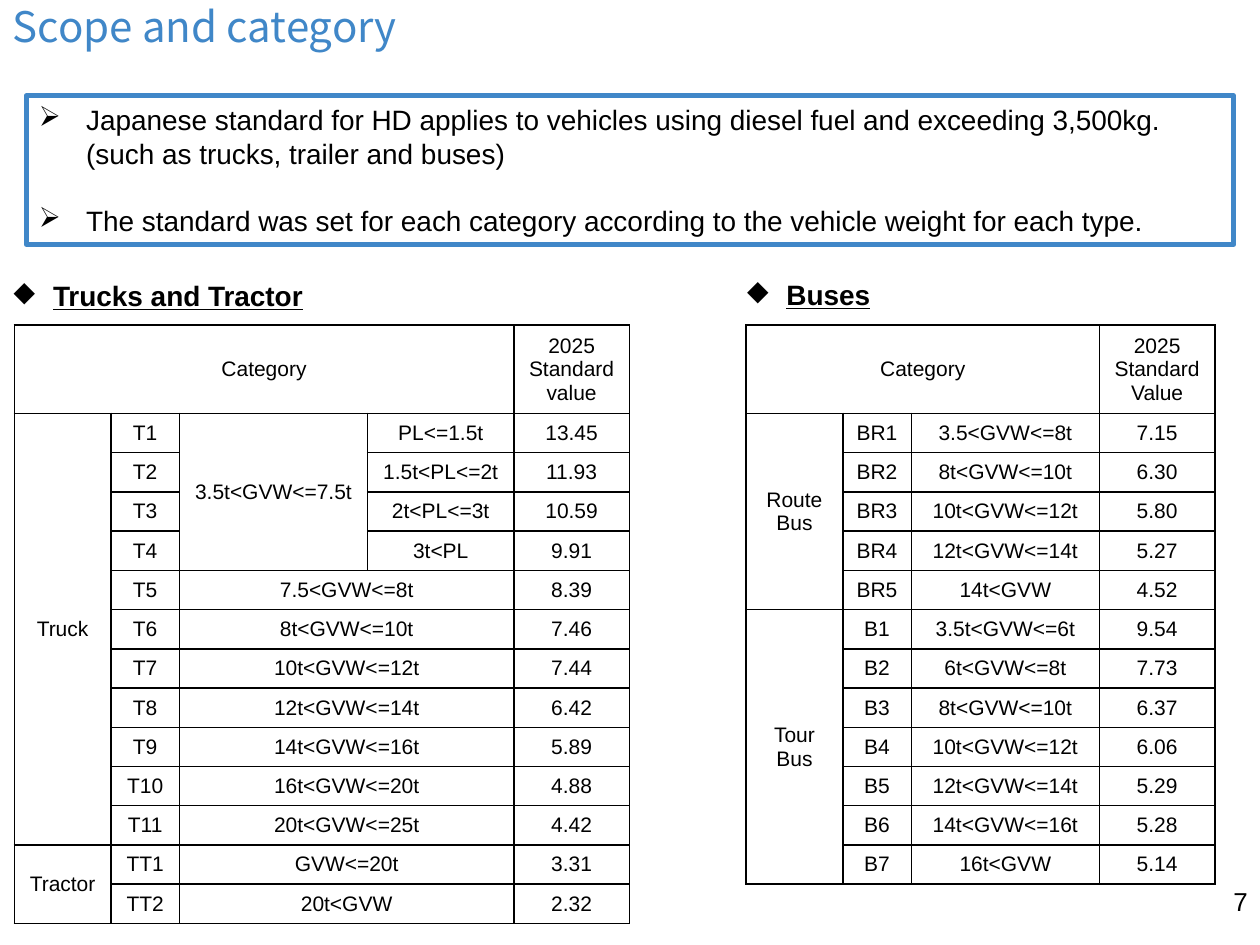
from pptx import Presentation
from pptx.dml.color import RGBColor as RGB
from pptx.enum.shapes import MSO_SHAPE as Shape
from pptx.enum.text import MSO_ANCHOR as Anchor, MSO_AUTO_SIZE as Fit, PP_ALIGN as Align
from pptx.oxml import parse_xml
from pptx.oxml.ns import nsdecls
from pptx.oxml.xmlchemy import OxmlElement as Elem
from pptx.util import Pt

BLACK = RGB(0, 0, 0)
WHITE = RGB(255, 255, 255)
BLUE = RGB(0x40, 0x87, 0xC8)

TOP, HEAD, ROW = 185.8, 50.4, 22.44
SIDE, CODE, RANGE, LOAD, VALUE = 55.2, 39.2, 107.5, 83.6, 66

TRUCKS = [
    ("T1", "PL<=1.5t", "13.45"),
    ("T2", "1.5t<PL<=2t", "11.93"),
    ("T3", "2t<PL<=3t", "10.59"),
    ("T4", "3t<PL", "9.91"),
    ("T5", "7.5<GVW<=8t", "8.39"),
    ("T6", "8t<GVW<=10t", "7.46"),
    ("T7", "10t<GVW<=12t", "7.44"),
    ("T8", "12t<GVW<=14t", "6.42"),
    ("T9", "14t<GVW<=16t", "5.89"),
    ("T10", "16t<GVW<=20t", "4.88"),
    ("T11", "20t<GVW<=25t", "4.42"),
    ("TT1", "GVW<=20t", "3.31"),
    ("TT2", "20t<GVW", "2.32"),
]
BUSES = [
    ("BR1", "3.5<GVW<=8t", "7.15"),
    ("BR2", "8t<GVW<=10t", "6.30"),
    ("BR3", "10t<GVW<=12t", "5.80"),
    ("BR4", "12t<GVW<=14t", "5.27"),
    ("BR5", "14t<GVW", "4.52"),
    ("B1", "3.5t<GVW<=6t", "9.54"),
    ("B2", "6t<GVW<=8t", "7.73"),
    ("B3", "8t<GVW<=10t", "6.37"),
    ("B4", "10t<GVW<=12t", "6.06"),
    ("B5", "12t<GVW<=14t", "5.29"),
    ("B6", "14t<GVW<=16t", "5.28"),
    ("B7", "16t<GVW", "5.14"),
]


def write(frame, text, size=12, font="Arial", color=BLACK, align=Align.LEFT,
          bold=False, line=False, mark=None, dent=0, gap=0):
    """Fill a frame, one paragraph for each line of text."""
    for i, part in enumerate(text.split("\n")):
        para = frame.add_paragraph() if i else frame.paragraphs[0]
        if mark:
            add_mark(para, mark, dent)
        para.alignment = align
        if i and gap:
            para.space_before = Pt(gap)
        run = para.add_run()
        run.text = part
        style = run.font
        style.size, style.name = Pt(size), font
        style.bold, style.underline = bold, line
        style.color.rgb = color


def add_mark(para, mark, dent):
    """Give a paragraph a bullet with a hanging indent."""
    props = para._p.get_or_add_pPr()
    props.set("marL", str(Pt(dent)))
    props.set("indent", str(-Pt(dent)))
    char = Elem("a:buChar")
    char.set("char", mark)
    props.append(char)


def add_text(slide, text, x, y, w, h, **form):
    frame = slide.shapes.add_textbox(Pt(x), Pt(y), Pt(w), Pt(h)).text_frame
    frame.word_wrap = True
    write(frame, text, **form)


def add_title(slide, text):
    title = slide.shapes.title
    title.left, title.top, title.width, title.height = Pt(0), Pt(0), Pt(642), Pt(32)
    frame = title.text_frame
    frame.auto_size = Fit.NONE
    frame.vertical_anchor = Anchor.TOP
    frame.margin_top = frame.margin_bottom = Pt(0)
    write(frame, text, size=24, font="Noto Sans CJK JP", color=BLUE)


def add_panel(slide, text, x, y, w, h):
    box = slide.shapes.add_shape(Shape.RECTANGLE, Pt(x), Pt(y), Pt(w), Pt(h))
    box.shadow.inherit = False
    box.fill.background()
    box.line.color.rgb, box.line.width = BLUE, Pt(3)
    box.text_frame.word_wrap = True
    box.text_frame.vertical_anchor = Anchor.MIDDLE
    write(box.text_frame, text, size=16, mark="➢", dent=27, gap=19.5)


def add_edges(cell):
    props = cell._tc.get_or_add_tcPr()
    for i, side in enumerate(("lnL", "lnR", "lnT", "lnB")):
        props.insert(i, parse_xml(
            f'<a:{side} {nsdecls("a")} w="{Pt(1)}"><a:solidFill>'
            f'<a:srgbClr val="{BLACK}"/></a:solidFill></a:{side}>'))


def add_grid(slide, x, cols, cells, spans):
    """Draw a table; cells maps (row, column) to text, spans lists corner pairs."""
    count = max(r for r, _ in cells) + 1
    high = HEAD + ROW * (count - 1)
    table = slide.shapes.add_table(count, len(cols), Pt(x), Pt(TOP),
                                   Pt(sum(cols)), Pt(high)).table
    table.first_row = table.horz_banding = False
    for col, wide in zip(table.columns, cols):
        col.width = Pt(wide)
    for r, row in enumerate(table.rows):
        row.height = Pt(ROW if r else HEAD)
        for c, cell in enumerate(row.cells):
            cell.fill.solid()
            cell.fill.fore_color.rgb = WHITE
            cell.vertical_anchor = Anchor.MIDDLE
            add_edges(cell)
            if (r, c) in cells:
                write(cell.text_frame, cells[r, c], align=Align.CENTER)
    for start, end in spans:
        table.cell(*start).merge(table.cell(*end))


def add_trucks(slide):
    cells = {(0, 0): "Category", (0, 4): "2025 Standard\nvalue",
             (1, 0): "Truck", (12, 0): "Tractor", (1, 2): "3.5t<GVW<=7.5t"}
    for r, (code, span, value) in enumerate(TRUCKS, 1):
        cells.update({(r, 1): code, (r, 3 if r < 5 else 2): span, (r, 4): value})
    spans = [((0, 0), (0, 3)), ((1, 0), (11, 0)), ((12, 0), (13, 0)), ((1, 2), (4, 2))]
    spans += [((r, 2), (r, 3)) for r in range(5, 14)]
    add_grid(slide, 8.2, [SIDE, CODE, RANGE, LOAD, VALUE], cells, spans)


def add_buses(slide):
    cells = {(0, 0): "Category", (0, 3): "2025 Standard\nValue",
             (1, 0): "Route\nBus", (6, 0): "Tour\nBus"}
    for r, row in enumerate(BUSES, 1):
        cells.update({(r, c): text for c, text in enumerate(row, 1)})
    spans = [((0, 0), (0, 2)), ((1, 0), (5, 0)), ((6, 0), (12, 0))]
    add_grid(slide, 426.4, [SIDE, CODE, RANGE, VALUE], cells, spans)


def main():
    deck = Presentation()
    deck.slide_width, deck.slide_height = Pt(720), Pt(540)
    slide = deck.slides.add_slide(deck.slide_layouts[5])

    # Title and summary
    add_title(slide, "Scope and category")
    add_panel(slide, "Japanese standard for HD applies to vehicles using diesel fuel and "
              "exceeding 3,500kg. (such as trucks, trailer and buses)\n"
              "The standard was set for each category according to the vehicle weight "
              "for each type.", 15.1, 54.7, 689.8, 85)

    # Tables with their headings
    add_trucks(slide)
    add_buses(slide)
    for text, x, y in (("Trucks and Tractor", 0.7, 155.5), ("Buses", 419.8, 155)):
        add_text(slide, text, x, y, 186.5, 26.6, size=16, bold=True, line=True,
                 mark="◆", dent=22.5)

    # Page number
    add_text(slide, "7", 666, 502.6, 54, 37.4, size=14.8, align=Align.RIGHT)
    deck.save("out.pptx")


if __name__ == "__main__":
    main()
